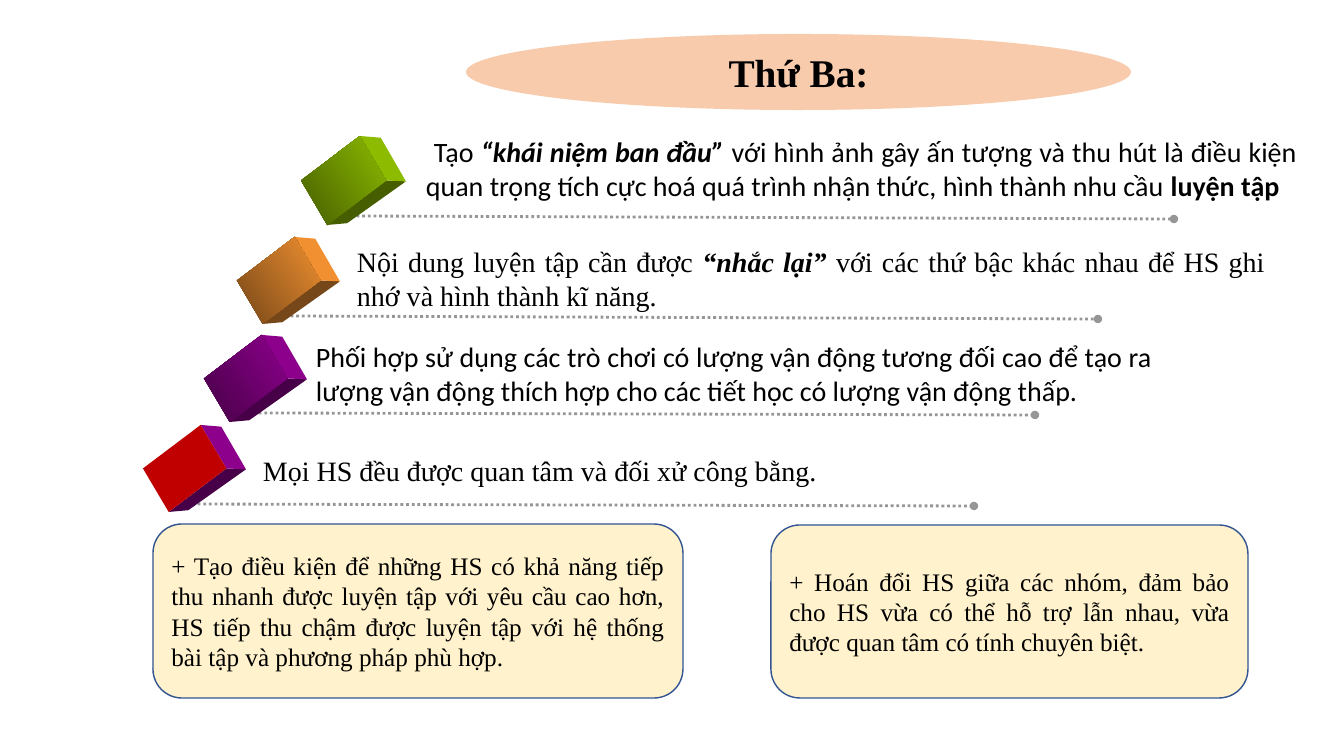
from lxml import etree
from pptx import Presentation
from pptx.dml.color import RGBColor
from pptx.enum.dml import MSO_LINE_DASH_STYLE as DASH
from pptx.enum.shapes import MSO_CONNECTOR as CONN, MSO_SHAPE as SHAPE
from pptx.enum.text import MSO_ANCHOR as ANCHOR, PP_ALIGN as ALIGN
from pptx.oxml.ns import qn
from pptx.util import Pt

EMU_PER_PX = 914400 / 100.8
SERIF = "Times New Roman"
SANS = "Calibri"

POINTS = [
    dict(cube=(301, 136, 105, 89), line=(351, 216, 1174, 219), box=(416, 130, 891, 78),
         faces=("8CBB00", "475E00", "8CBB00", "475E00"), font=SANS, indent=8,
         runs=[("Tạo ", ""), ("“khái niệm ban đầu” ", "bi"),
               ("với hình ảnh gây ấn tượng và thu hút là điều kiện quan trọng tích cực hoá "
                "quá trình nhận thức, hình thành nhu cầu ", ""), ("luyện tập", "b")]),
    dict(cube=(237, 237, 103, 87), line=(285, 316, 1098, 319), box=(347, 240, 928, 78),
         faces=("F09030", "764718", "F09030", "764718"), font=SERIF,
         runs=[("Nội dung luyện tập cần được ", ""), ("“nhắc lại” ", "bi"),
               ("với các thứ bậc khác nhau để HS ghi nhớ và hình thành kĩ năng.", "")]),
    dict(cube=(204, 335, 103, 87), line=(253, 413, 1035, 415), box=(306, 335, 856, 78),
         faces=("8C008C", "470047", "8C008C", "470047"), font=SANS,
         runs=[("Phối hợp sử dụng các trò chơi có lượng vận động tương đối cao để tạo ra "
                "lượng vận động thích hợp cho các tiết học có lượng vận động thấp.", "")]),
    dict(cube=(143, 425, 103, 87), line=(192, 504, 974, 506), box=(253, 449, 856, 43),
         faces=("C00000", "C00000", "8C008C", "470047"), font=SERIF,
         runs=[("Mọi HS đều được quan tâm và đối xử công bằng.", "")]),
]

NOTES = [
    ((153, 524, 530, 174),
     "+ Tạo điều kiện để những HS có khả năng tiếp thu nhanh được luyện tập với yêu cầu "
     "cao hơn, HS tiếp thu chậm được luyện tập với hệ thống bài tập và phương pháp phù hợp."),
    ((771, 525, 477, 173),
     "+ Hoán đổi HS giữa các nhóm, đảm bảo cho HS vừa có thể hỗ trợ lẫn nhau, "
     "vừa được quan tâm có tính chuyên biệt."),
]


def px(*values):
    return [round(v * EMU_PER_PX) for v in values]


def color(hex_code):
    return RGBColor.from_string(hex_code)


def write(sp, runs, font=SERIF, size=20, align=ALIGN.JUSTIFY, anchor=ANCHOR.TOP, indent=0):
    tf = sp.text_frame
    tf.word_wrap = True
    tf.vertical_anchor = anchor
    p = tf.paragraphs[0]
    p.alignment = align
    if indent:
        p._p.get_or_add_pPr().set("indent", str(px(indent)[0]))
    for text, style in runs:
        r = p.add_run()
        r.text = text
        r.font.name = font
        r.font.size = Pt(size)
        r.font.bold = "b" in style
        r.font.italic = "i" in style
        r.font.color.rgb = color("000000")


def paint(sp, fill, line=None):
    sp.shadow.inherit = False
    sp.fill.solid()
    sp.fill.fore_color.rgb = color(fill)
    if line:
        sp.line.color.rgb = color(line)
        sp.line.width = Pt(1)
    else:
        sp.line.fill.background()


def add_heading(s, box, text):
    ellipse = s.shapes.add_shape(SHAPE.OVAL, *px(*box))
    paint(ellipse, "F8CBAD")
    title = s.shapes.title
    title.left, title.top, title.width, title.height = px(*box)
    write(title, [(text, "b")], size=28, align=ALIGN.CENTER, anchor=ANCHOR.MIDDLE)
    s.shapes._spTree.append(title._element)


def add_dotted_line(s, ends):
    line = s.shapes.add_connector(CONN.STRAIGHT, *px(*ends))
    line.line.color.rgb = color("969696")
    line.line.width = Pt(2)
    line.line.dash_style = DASH.ROUND_DOT
    etree.SubElement(line.line._get_or_add_ln(), qn("a:tailEnd"), type="oval")
    etree.SubElement(line._element.spPr, qn("a:effectLst"))


def add_cube(s, box, faces):
    x, y, w, h = box
    left, top, inner, bottom = (0, .5), (.56, 0), (.81, .5), (.25, 1)
    back_top, back_right, back_bottom = (.76, .02), (1, .51), (.44, .98)
    bright, dark, side, base = faces
    outlines = [
        ((bottom, inner, back_right, back_bottom), base),
        ((top, back_top, back_right, inner), side),
        ((left, top, inner, bottom), bright),
    ]
    for corners, fill in outlines:
        first, *rest = [px(x + u * w, y + v * h) for u, v in corners]
        builder = s.shapes.build_freeform(*first)
        builder.add_line_segments(rest)
        face = builder.convert_to_shape()
        paint(face, fill)
    if dark != bright:
        face.fill.gradient()
        face.fill.gradient_angle = 35
        for stop, shade, position in zip(face.fill.gradient_stops, (dark, bright), (0, 1)):
            stop.color.rgb = color(shade)
            stop.position = position


def add_point(s, cube, line, box, faces, runs, font, indent=0):
    add_dotted_line(s, line)
    add_cube(s, cube, faces)
    write(s.shapes.add_textbox(*px(*box)), runs, font=font, indent=indent)


def add_note(s, box, text):
    sp = s.shapes.add_shape(SHAPE.ROUNDED_RECTANGLE, *px(*box))
    paint(sp, "FFF2CC", "325491")
    write(sp, [(text, "")], size=18, anchor=ANCHOR.MIDDLE)


def main():
    prs = Presentation()
    prs.slide_width, prs.slide_height = px(1344, 756)
    s = prs.slides.add_slide(prs.slide_layouts[5])
    add_heading(s, (466, 34, 665, 76), "Thứ Ba:")
    for point in POINTS:
        add_point(s, **point)
    for box, text in NOTES:
        add_note(s, box, text)
    prs.save("out.pptx")


if __name__ == "__main__":
    main()
